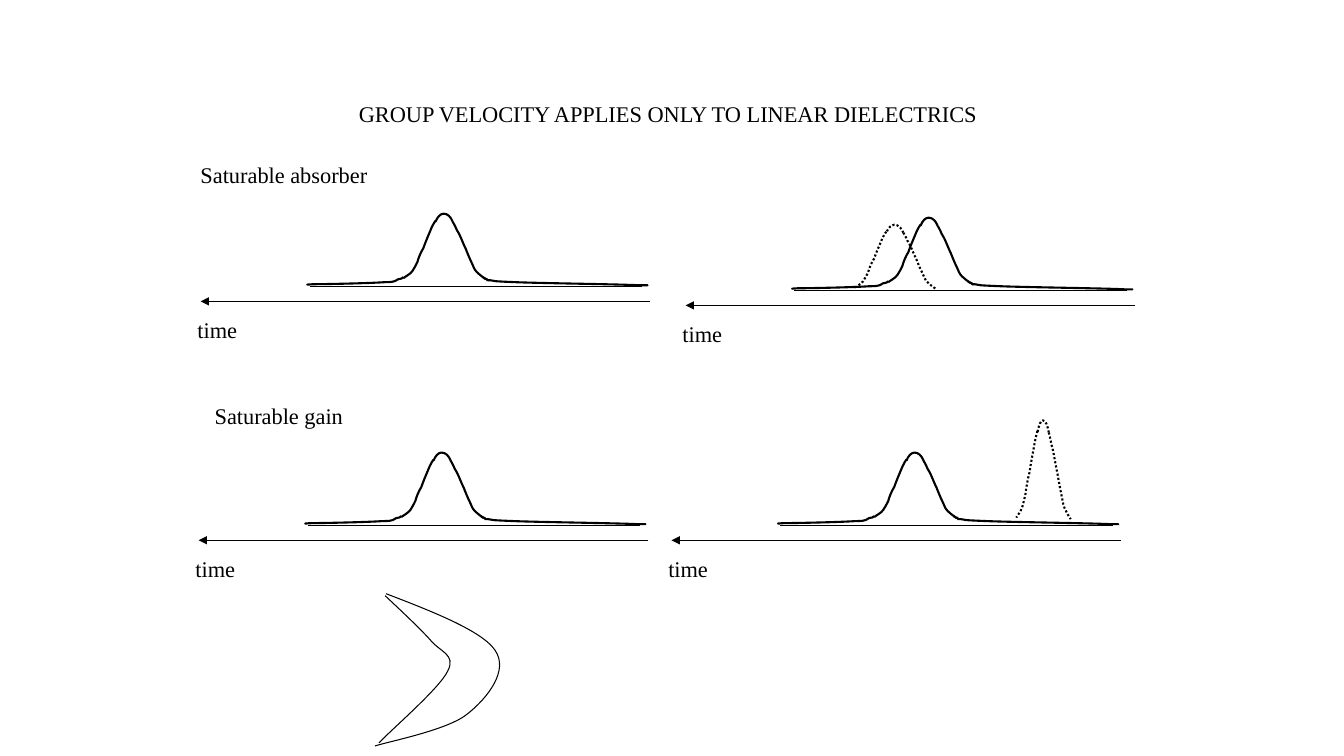
from copy import deepcopy

from lxml import etree
from pptx import Presentation
from pptx import util as u
from pptx.dml.color import RGBColor
from pptx.enum import dml, shapes, text
from pptx.oxml.ns import qn

FONT = "Times New Roman"
BLACK = "000000"

# Bezier chains: a start point, then two handles and an end point per segment.
# The bell and its tails are in inches from the bell's top left corner.
BELL_W, BELL_H = 0.82, 0.65
BELL_CENTRE = (.40, .37)
BELL_CAP = [(.49, .08),
            (.47, .03), (.44, 0), (.40, 0), (.37, 0), (.34, .03), (.32, .08)]
LEFT_LIMB = [(.32, .07),
             (.31, .08), (.30, .10), (.28, .14), (.26, .19), (.22, .28), (.20, .34),
             (.17, .39), (.15, .44), (.14, .48), (.12, .52), (.11, .54), (.09, .57),
             (.07, .60), (.01, .63), (0, .64)]
RIGHT_LIMB = [(.49, .08),
              (.50, .10), (.51, .11), (.53, .16), (.56, .20), (.59, .29), (.62, .35),
              (.64, .40), (.66, .45), (.68, .49), (.70, .53), (.70, .55), (.73, .58),
              (.75, .60), (.80, .64), (.82, .65)]
LEFT_TAIL = [(0, .63),
             (-.01, .64), (-.02, .65), (-.05, .65), (-.09, .66), (-.05, .68), (-.19, .68),
             (-.33, .69), (-.78, .70), (-.90, .70), (-1.01, .71), (-.94, .70), (-.87, .70)]
RIGHT_TAIL = [(.79, .63),
              (.80, .64), (.82, .65), (.83, .65), (.84, .66), (.81, .66), (.86, .66),
              (.91, .67), (.88, .67), (1.12, .68), (1.37, .69), (2.15, .70), (2.34, .71),
              (2.54, .71), (2.32, .71), (2.32, .71)]

# Crescent edges, in inches from the crescent's top left corner
OUTER_EDGE = [(.11, 0),
              (.58, .18), (1.06, .37), (1.19, .56), (1.33, .76), (1.12, 1.03), (.92, 1.19),
              (.73, 1.35), (.16, 1.46), (0, 1.51)]
INNER_EDGE = [(.10, .02),
              (.27, .18), (.43, .33), (.54, .45), (.64, .58), (.81, .60), (.72, .77),
              (.64, .94), (.15, 1.36), (.04, 1.48)]


def color(hex_code):
    return RGBColor.from_string(hex_code)


def bend_segments(outline):
    """Turn each three straight segments of an outline into one cubic curve."""
    lines = outline.findall(qn("a:lnTo"))
    for i in range(0, len(lines) - 2, 3):
        curve = etree.Element(qn("a:cubicBezTo"))
        lines[i].addprevious(curve)
        for line in lines[i:i + 3]:
            curve.append(line[0])
            outline.remove(line)


def split_sector(outline):
    """Leave the arc alone stroked, and add the closed sector without a stroke."""
    sector = deepcopy(outline)
    sector.set("stroke", "0")
    if sector.find(qn("a:close")) is None:
        etree.SubElement(sector, qn("a:close"))
    outline.addnext(sector)
    outline.set("fill", "none")
    outline.remove(outline.find(qn("a:lnTo")))


def add_curve(parent, chain, x, y, scale=(1, 1), width=1.5, dash=None, centre=None):
    points = [(u.Inches(x + px * scale[0]), u.Inches(y + py * scale[1]))
              for px, py in chain + ([centre] if centre else [])]
    builder = parent.shapes.build_freeform(*points[0])
    builder.add_line_segments(points[1:], close=False)
    sp = builder.convert_to_shape()
    outline = next(sp._element.iter(qn("a:path")))
    bend_segments(outline)
    if centre:
        split_sector(outline)
    sp.shadow.inherit = False
    sp.fill.background()
    sp.line.color.rgb = color(BLACK)
    sp.line.width = u.Pt(width)
    if dash:
        sp.line.dash_style = dash


def add_line(slide, x1, x2, y, arrow=False):
    line = slide.shapes.add_connector(shapes.MSO_CONNECTOR.STRAIGHT, u.Inches(x1),
                                      u.Inches(y), u.Inches(x2), u.Inches(y))
    line.line.color.rgb = color(BLACK)
    line.line.width = u.Pt(0.75)
    sp_pr = line._element.spPr
    if arrow:
        etree.SubElement(sp_pr.get_or_add_ln(), qn("a:tailEnd"), type="triangle")
    etree.SubElement(sp_pr, qn("a:effectLst"))


def add_label(slide, words, x, y, w, h=0.37):
    box = slide.shapes.add_textbox(u.Inches(x), u.Inches(y), u.Inches(w), u.Inches(h))
    tf = box.text_frame
    tf.word_wrap = False
    tf.auto_size = text.MSO_AUTO_SIZE.SHAPE_TO_FIT_TEXT
    r = tf.paragraphs[0].add_run()
    r.text = words
    r.font.name = FONT
    r.font.size = u.Pt(16)
    r.font.color.rgb = color(BLACK)


def add_bell(slide, x, y, w=BELL_W, h=BELL_H, dash=None):
    group = slide.shapes.add_group_shape()
    scale = (w / BELL_W, h / BELL_H)
    add_curve(group, BELL_CAP, x, y, scale, dash=dash, centre=BELL_CENTRE)
    for limb in (LEFT_LIMB, RIGHT_LIMB):
        add_curve(group, limb, x, y, scale, dash=dash)


def add_pulse_panel(slide, x, y, shifted_pulse=None):
    """Pulse on its time axis; shifted_pulse is a box relative to the panel."""
    bell_x = x + 2.14
    add_bell(slide, bell_x, y)
    add_curve(slide, LEFT_TAIL, bell_x, y)
    add_line(slide, x + 1.21, x + 4.51, y + 0.72)
    add_curve(slide, RIGHT_TAIL, bell_x, y)
    add_line(slide, x + 4.59, x + 0.13, y + 0.87, arrow=True)
    add_label(slide, "time", x, y + 0.97, 0.6)
    if shifted_pulse:
        dx, dy, w, h = shifted_pulse
        add_bell(slide, x + dx, y + dy, w, h, dml.MSO_LINE.ROUND_DOT)


def add_crescent(slide, x, y):
    for edge in (OUTER_EDGE, INNER_EDGE):
        add_curve(slide, edge, x, y, width=0.75)


def main():
    prs = Presentation()
    prs.slide_width, prs.slide_height = u.Inches(13.33), u.Inches(7.5)
    slide = prs.slides.add_slide(prs.slide_layouts[6])

    add_label(slide, "GROUP VELOCITY APPLIES ONLY TO LINEAR DIELECTRICS", 3.46, 0.94, 6.41)

    # Saturable absorber: before and after
    add_label(slide, "Saturable absorber", 1.89, 1.55, 1.87)
    add_pulse_panel(slide, 1.86, 2.12)
    add_pulse_panel(slide, 6.67, 2.16, shifted_pulse=(1.8, 0.07, 0.82, 0.64))

    # Saturable gain: before and after
    add_label(slide, "Saturable gain", 2.03, 3.94, 1.48)
    add_pulse_panel(slide, 1.84, 4.49)
    add_pulse_panel(slide, 6.53, 4.49, shifted_pulse=(3.55, -0.32, 0.54, 0.98))

    add_crescent(slide, 3.72, 5.89)
    prs.save("out.pptx")


if __name__ == "__main__":
    main()
